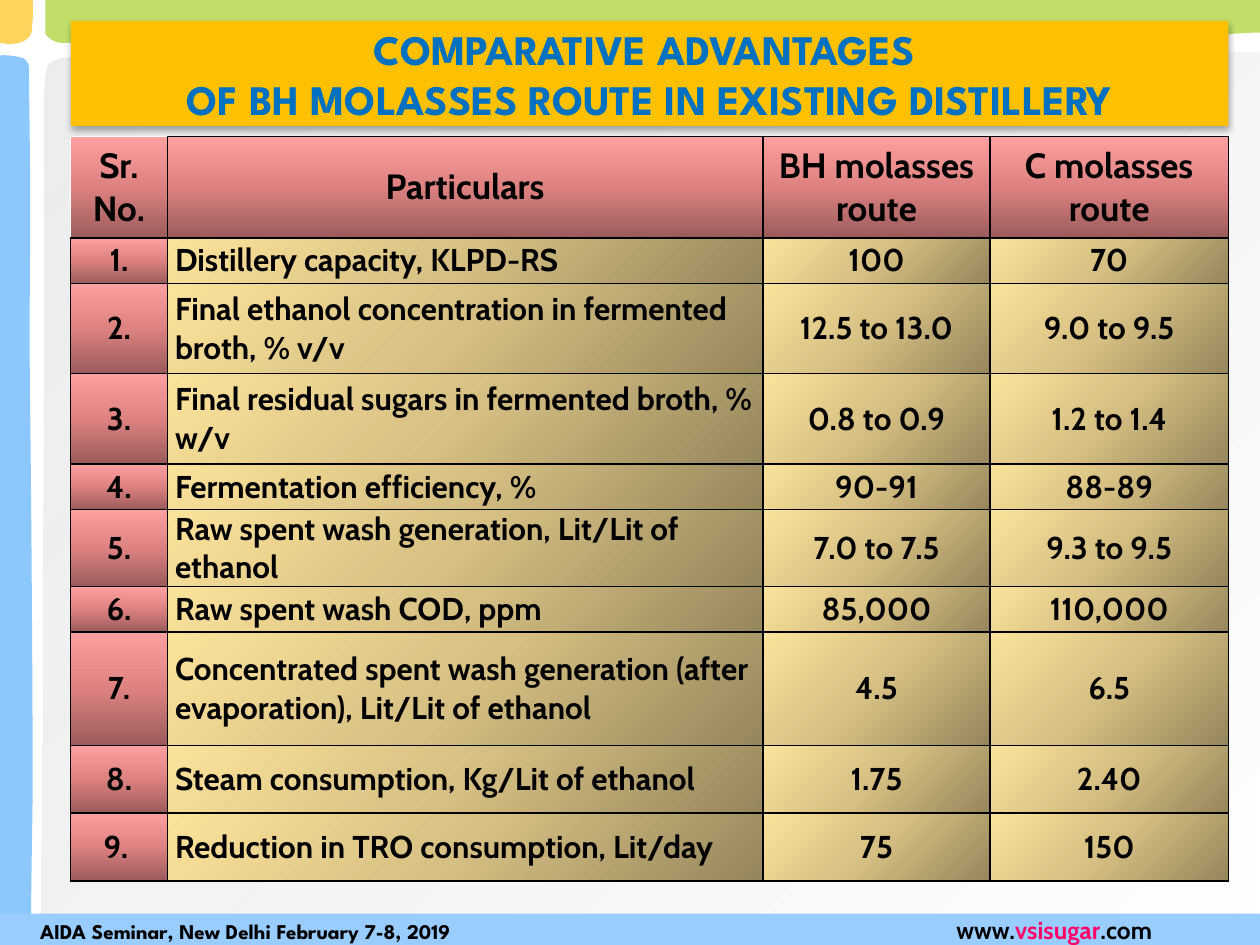
from lxml import etree
from pptx import Presentation
from pptx.dml.color import RGBColor
from pptx.enum.shapes import MSO_SHAPE
from pptx.enum.text import MSO_ANCHOR, MSO_AUTO_SIZE, PP_ALIGN
from pptx.oxml.ns import qn
from pptx.util import Pt

RECT = MSO_SHAPE.RECTANGLE
MIDDLE = MSO_ANCHOR.MIDDLE
NO_FIT = MSO_AUTO_SIZE.NONE
LEFT, CENTER = PP_ALIGN.LEFT, PP_ALIGN.CENTER

BLACK = RGBColor(0x00, 0x00, 0x00)
BLUE = RGBColor(0x00, 0x70, 0xC0)
PINK = RGBColor(0xFF, 0x00, 0x66)
AMBER = RGBColor(0xFF, 0xC0, 0x00)
SKY = RGBColor(0x99, 0xCC, 0xFF)
LIME = RGBColor(0xA8, 0xD0, 0x2A)
AZURE = RGBColor(0x5C, 0xB1, 0xFE)
GOLD = RGBColor(0xFF, 0xC3, 0x19)
GREY = RGBColor(0xE6, 0xE6, 0xE6)
WHITE = RGBColor(0xFF, 0xFF, 0xFF)
ROSE = [RGBColor(0x9B, 0x5B, 0x5B), RGBColor(0xDD, 0x81, 0x81), RGBColor(0xFF, 0xA0, 0xA0)]
SAND = [RGBColor(0x96, 0x86, 0x5C), RGBColor(0xD5, 0xBF, 0x82), RGBColor(0xFC, 0xE3, 0x9B)]

BODY, HEAD = "Cabin", "League Spartan"

# Each outline: start, one straight side, then curves of three points each
PANEL = [(720, 540), (720, 30.2),
         (637.9, 27.4), (615.6, 30.2), (547.2, 30.2),
         (479.5, 30.2), (396, 31), (311.8, 30.2),
         (227.5, 29.5), (88.6, 29.5), (41, 32.4),
         (25.9, 34.6), (25.9, 35.3), (25.2, 52.6),
         (24.5, 69.1), (25.2, 79.2), (25.2, 131),
         (25.2, 184.3), (24.5, 296.6), (24.5, 364.3),
         (24.5, 432.7), (23, 476.6), (23.8, 540)]
TOP = [(720, 0), (720, 18.7),
       (720.7, 18), (668.2, 22.3), (599, 23),
       (529.9, 23.8), (382.3, 21.6), (306.7, 22.3),
       (231.1, 23.8), (190.8, 22.3), (146.2, 22.3),
       (100.8, 23), (55.4, 24.5), (35.3, 24.5),
       (29.5, 24.5), (25.9, 19.4), (25.9, 19.4),
       (25.9, 19.4), (25.9, 10), (25.9, 0)]
SIDE = [(0, 539.3), (18, 540),
        (17.3, 540), (18, 502.6), (18.7, 452.2),
        (18.7, 401.8), (18, 293), (17.3, 237.6),
        (16.6, 182.9), (17.3, 152.6), (17.3, 120.2),
        (17.3, 87.1), (16.6, 54), (16.6, 38.9),
        (16.6, 34.6), (13, 33.1), (13, 33.1),
        (5, 31), (0, 31.7), (0, 31.7)]
CORNER = [(0, 0), (18.7, 0),
          (19.4, 8.6), (18, 18.7), (18, 18.7),
          (16.6, 22.3), (13.7, 23.8), (10.8, 24.5),
          (5, 25.9), (0, 24.5), (0, 24.5)]

COLS = [55.5, 340.25, 129.75, 136.25]
HIGH = [58, 26, 51.5, 51.75, 26, 39, 26, 64.75, 38.75, 38.75]
ROWS = [
    ("Sr. No.", "Particulars", "BH molasses route", "C molasses\nroute"),
    ("1.", "Distillery capacity, KLPD-RS", "100", "70"),
    ("2.", "Final ethanol concentration in fermented broth, % v/v", "12.5 to 13.0", "9.0 to 9.5"),
    ("3.", "Final residual sugars in fermented broth, % w/v", "0.8 to 0.9", "1.2 to 1.4"),
    ("4.", "Fermentation efficiency, %", "90-91", "88-89"),
    ("5.", "Raw spent wash generation, Lit/Lit of ethanol", "7.0 to 7.5", "9.3 to 9.5"),
    ("6.", "Raw spent wash COD, ppm", "85,000", "110,000"),
    ("7.", "Concentrated spent wash generation (after evaporation), Lit/Lit of ethanol", "4.5", "6.5"),
    ("8.", "Steam consumption, Kg/Lit of ethanol", "1.75", "2.40"),
    ("9.", "Reduction in TRO consumption, Lit/day", "75", "150"),
]


def add_node(root, tag, **attrs):
    node = etree.SubElement(root, qn(tag))
    for key, value in attrs.items():
        node.set(key, str(value))
    return node


def fade(color, alpha):
    add_node(color, "a:alpha", val=alpha * 1000)


def blend(root, colors, angle):
    """Append a linear gradient with evenly spaced stops."""
    grad = add_node(root, "a:gradFill", rotWithShape=1)
    stops = add_node(grad, "a:gsLst")
    for i, color in enumerate(colors):
        stop = add_node(stops, "a:gs", pos=100000 * i // (len(colors) - 1))
        add_node(stop, "a:srgbClr", val=color)
    add_node(grad, "a:lin", ang=angle * 60000, scaled=0)
    return stops


def style(font, size, color=BLACK, name=BODY):
    font.name, font.size, font.bold = name, Pt(size), True
    font.color.rgb = color


def bend(props):
    """Join every three lines after the first into one cubic curve."""
    lines = list(props.iter(qn("a:lnTo")))[1:]
    for i in range(0, len(lines), 3):
        arc = etree.Element(qn("a:cubicBezTo"))
        lines[i].addprevious(arc)
        for line in lines[i:i + 3]:
            arc.append(line[0])
            line.getparent().remove(line)


def add_wave(slide, points, colors):
    first, *rest = [(Pt(x), Pt(y)) for x, y in points]
    pen = slide.shapes.build_freeform(*first)
    pen.add_line_segments(rest, close=True)
    wave = pen.convert_to_shape()
    props = wave.element.spPr
    bend(props)
    if len(colors) > 1:
        stops = blend(props, colors, 45)
        fade(stops[0][0], 70)
    else:
        wave.fill.solid()
        wave.fill.fore_color.rgb = colors[0]
        fade(props.find(".//" + qn("a:srgbClr")), 70)
    wave.line.fill.background()
    wave.shadow.inherit = False


def add_footer(slide):
    bar = slide.shapes.add_shape(RECT, 0, Pt(522), Pt(720), Pt(18))
    bar.shadow.inherit = False
    bar.fill.solid()
    bar.fill.fore_color.rgb = SKY
    bar.line.fill.background()
    frame = bar.text_frame
    frame.vertical_anchor = MIDDLE
    frame.margin_left = Pt(23)
    frame.margin_right = frame.margin_top = frame.margin_bottom = 0
    para = frame.paragraphs[0]
    para.alignment = LEFT
    tabs = add_node(para._p.get_or_add_pPr(), "a:tabLst")
    add_node(tabs, "a:tab", pos=Pt(523.5), algn="l")
    for text, size, color, name in (
            ("AIDA Seminar, New Delhi February 7-8, 2019\t", 12, BLACK, HEAD),
            ("www.", 14, BLACK, BODY), ("vsisugar", 14, PINK, BODY), (".com", 14, BLACK, BODY)):
        run = para.add_run()
        run.text = text
        style(run.font, size, color, name)


def set_title(slide):
    title = slide.shapes.title
    slide.shapes.element.append(title.element)  # bring in front of the waves
    title.left, title.top, title.width, title.height = Pt(40.5), Pt(12), Pt(661.5), Pt(60)
    title.fill.solid()
    title.fill.fore_color.rgb = AMBER
    effects = add_node(title.element.spPr, "a:effectLst")
    shade = add_node(effects, "a:outerShdw", blurRad=Pt(3.5), dist=Pt(2.2), dir=90 * 60000, rotWithShape=0)
    fade(add_node(shade, "a:srgbClr", val=BLACK), 32)
    frame = title.text_frame
    frame.text = "COMPARATIVE ADVANTAGES \vOF BH MOLASSES ROUTE IN EXISTING DISTILLERY"
    frame.auto_size = NO_FIT
    frame.vertical_anchor = MIDDLE
    frame.paragraphs[0].alignment = CENTER
    for run in frame.paragraphs[0].runs:
        style(run.font, 24, BLUE, HEAD)


def set_cell(cell, text, size, align, sides, colors, angle):
    cell.text_frame.text = text
    cell.vertical_anchor = MIDDLE
    cell.margin_left = cell.margin_right = Pt(4.3)
    cell.margin_top = cell.margin_bottom = 0
    for para in cell.text_frame.paragraphs:
        para.alignment = align
        for run in para.runs:
            style(run.font, size)
    props = cell._tc.get_or_add_tcPr()
    for side in sides:
        line = add_node(props, "a:ln" + side, w=Pt(1))
        add_node(add_node(line, "a:solidFill"), "a:srgbClr", val=BLACK)
    blend(props, colors, angle)


def add_grid(slide):
    frame = slide.shapes.add_table(len(ROWS), len(COLS), Pt(40.25), Pt(78), Pt(sum(COLS)), Pt(sum(HIGH)))
    table = frame.table
    table.first_row = table.horz_banding = False
    for col, width in zip(table.columns, COLS):
        col.width = Pt(width)
    for r, (row, height) in enumerate(zip(ROWS, HIGH)):
        table.rows[r].height = Pt(height)
        for c, text in enumerate(row):
            look = (ROSE, 270) if r == 0 or c == 0 else (SAND, 225)
            align = LEFT if r > 0 and c == 1 else CENTER
            sides = "RB" if r == c == 0 else "LRTB"
            set_cell(table.cell(r, c), text, 18 if r else 20, align, sides, *look)
    # The last number is indented from the left
    last = table.cell(len(ROWS) - 1, 0)
    last.margin_left = Pt(19)
    last.text_frame.paragraphs[0].alignment = LEFT


def main():
    deck = Presentation()
    deck.slide_width, deck.slide_height = Pt(720), Pt(540)
    slide = deck.slides.add_slide(deck.slide_layouts[5])
    # Background waves
    for points, colors in ((PANEL, [GREY, WHITE]), (TOP, [LIME]), (SIDE, [AZURE]), (CORNER, [GOLD])):
        add_wave(slide, points, colors)
    add_footer(slide)
    set_title(slide)
    add_grid(slide)
    deck.save("out.pptx")


if __name__ == "__main__":
    main()
